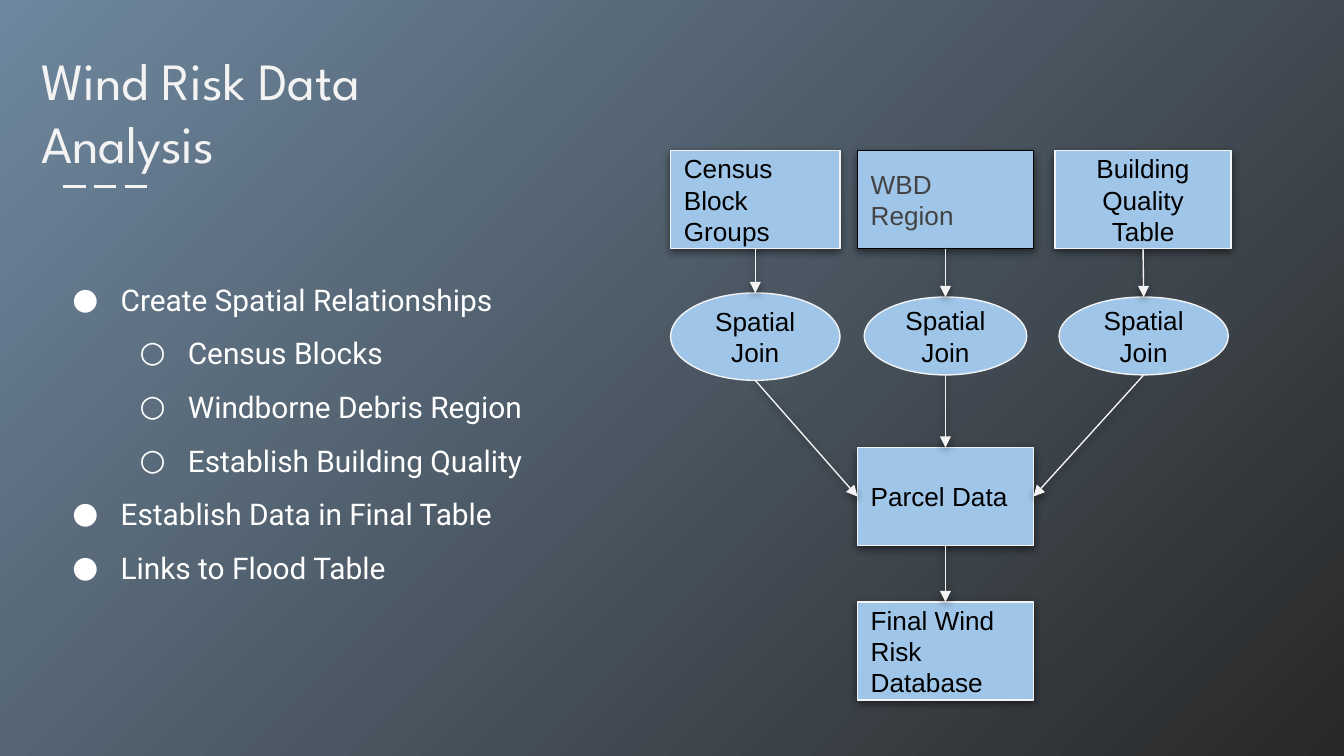
from dataclasses import dataclass

from lxml import etree
from pptx import Presentation
from pptx.dml.color import RGBColor
from pptx.enum.dml import MSO_LINE
from pptx.enum.shapes import MSO_CONNECTOR, MSO_SHAPE
from pptx.enum.text import MSO_ANCHOR, PP_ALIGN
from pptx.oxml.ns import qn
from pptx.util import Inches, Pt

RECT, OVAL = MSO_SHAPE.RECTANGLE, MSO_SHAPE.OVAL
STRAIGHT = MSO_CONNECTOR.STRAIGHT
LONG_DASH = MSO_LINE.LONG_DASH
LEFT, CENTER = PP_ALIGN.LEFT, PP_ALIGN.CENTER
TOP, MIDDLE = MSO_ANCHOR.TOP, MSO_ANCHOR.MIDDLE


@dataclass(frozen=True)
class Theme:
    sky: RGBColor = RGBColor.from_string("6E879E")
    night: RGBColor = RGBColor.from_string("282828")
    pale: RGBColor = RGBColor.from_string("F3F3F3")
    white: RGBColor = RGBColor.from_string("FFFFFF")
    black: RGBColor = RGBColor.from_string("000000")
    gray: RGBColor = RGBColor.from_string("434343")
    node: RGBColor = RGBColor.from_string("9FC5E8")
    title_font: str = "League Spartan"
    body_font: str = "Roboto"
    node_font: str = "Arial"
    title_size: Pt = Pt(28)
    body_size: Pt = Pt(16)
    node_size: Pt = Pt(14)
    thin: Pt = Pt(0.75)
    dash: Pt = Pt(1.5)


theme = Theme()


def write_text(shape, lines, font, size, color, align, anchor):
    frame = shape.text_frame
    frame.word_wrap = True
    frame.vertical_anchor = anchor
    frame.margin_left = frame.margin_right = Inches(0.1)
    frame.margin_top = frame.margin_bottom = Inches(0.1)
    frame.text = "\n".join(lines)
    for para in frame.paragraphs:
        para.alignment = align
        for span in para.runs:
            span.font.name = font
            span.font.size = size
            span.font.color.rgb = color
    return frame.paragraphs


def add_shadow(effects):
    shadow = etree.SubElement(effects, qn("a:outerShdw"), blurRad=str(Pt(4.5)),
                              dist=str(Pt(1.5)), dir="5400000", algn="bl", rotWithShape="0")
    color = etree.SubElement(shadow, qn("a:srgbClr"), val=str(theme.black))
    etree.SubElement(color, qn("a:alpha"), val="50000")


deck = Presentation()
deck.slide_width = Inches(10)
deck.slide_height = deck.slide_width * 9 // 16
page = deck.slides.add_slide(deck.slide_layouts[6])
backdrop = page.background.fill
backdrop.gradient()
backdrop.gradient_angle = 315
for stop, color in zip(backdrop.gradient_stops, (theme.sky, theme.night)):
    stop.color.rgb = color

rule = page.shapes.add_connector(STRAIGHT, Inches(0.47), Inches(1.39), Inches(1.14), Inches(1.39))
rule.line.color.rgb = theme.pale
rule.line.width = theme.dash
rule.line.dash_style = LONG_DASH
etree.SubElement(rule._element.spPr, qn("a:effectLst"))

title = page.shapes.add_textbox(Inches(0.21), Inches(0.26), Inches(3.34), Inches(0.8))
write_text(title, ["Wind Risk Data", "Analysis"], theme.title_font,
           theme.title_size, theme.pale, LEFT, TOP)

points = [
    (0, "Create Spatial Relationships"),
    (1, "Census Blocks"),
    (1, "Windborne Debris Region"),
    (1, "Establish Building Quality"),
    (0, "Establish Data in Final Table"),
    (0, "Links to Flood Table"),
]
body = page.shapes.add_textbox(Inches(0.3), Inches(1.86), Inches(4.14), Inches(3.37))
paras = write_text(body, [text for level, text in points], theme.body_font,
                   theme.body_size, theme.white, LEFT, TOP)
for para, (level, text) in zip(paras, points):
    para.level = level
    para.line_spacing = 1.5
    settings = para._p.get_or_add_pPr()
    settings.set("marL", str(Inches(0.5 * (level + 1))))
    settings.set("indent", str(Inches(-0.36)))
    bullet_color = etree.SubElement(settings, qn("a:buClr"))
    etree.SubElement(bullet_color, qn("a:srgbClr"), val=str(theme.white))
    etree.SubElement(settings, qn("a:buFont"), typeface=theme.body_font)
    etree.SubElement(settings, qn("a:buChar"), char="●○"[level])

nodes = [
    ("census", RECT, "Census Block Groups", 4.99, 1.12, 1.26, 0.73, LEFT),
    ("region", RECT, "WBD Region", 6.38, 1.12, 1.31, 0.73, LEFT),
    ("quality", RECT, "Building Quality Table", 7.85, 1.12, 1.31, 0.73, CENTER),
    ("census join", OVAL, "Spatial Join", 4.99, 2.18, 1.26, 0.65, CENTER),
    ("region join", OVAL, "Spatial Join", 6.43, 2.21, 1.21, 0.58, CENTER),
    ("quality join", OVAL, "Spatial Join", 7.88, 2.21, 1.26, 0.58, CENTER),
    ("parcel", RECT, "Parcel Data", 6.38, 3.33, 1.31, 0.73, LEFT),
    ("final", RECT, "Final Wind Risk Database", 6.38, 4.48, 1.31, 0.73, LEFT),
]
boxes = {}
for name, kind, text, left, top, width, height, align in nodes:
    box = page.shapes.add_shape(kind, Inches(left), Inches(top), Inches(width), Inches(height))
    box.fill.solid()
    box.fill.fore_color.rgb = theme.node
    box.line.color.rgb = theme.black if name == "region" else theme.pale
    box.line.width = theme.thin
    box.shadow.inherit = False
    if kind == RECT:
        add_shadow(box._element.spPr.find(qn("a:effectLst")))
    color = theme.gray if name == "region" else theme.black
    write_text(box, [text], theme.node_font, theme.node_size, color, align, MIDDLE)
    boxes[name] = box

links = [
    ("census", "census join", "top"),
    ("region", "region join", "top"),
    ("quality", "quality join", "top"),
    ("census join", "parcel", "left"),
    ("region join", "parcel", "top"),
    ("quality join", "parcel", "right"),
    ("parcel", "final", "top"),
]
for source, target, side in links:
    start, end = boxes[source], boxes[target]
    across = {"left": 0, "top": 0.5, "right": 1}[side]
    down = 0 if side == "top" else 0.5
    arrow = page.shapes.add_connector(
        STRAIGHT, start.left + start.width // 2, start.top + start.height,
        end.left + int(end.width * across), end.top + int(end.height * down))
    arrow.line.color.rgb = theme.pale
    arrow.line.width = theme.thin
    etree.SubElement(arrow.line._get_or_add_ln(), qn("a:tailEnd"), type="triangle")
    add_shadow(etree.SubElement(arrow._element.spPr, qn("a:effectLst")))

deck.save("out.pptx")
